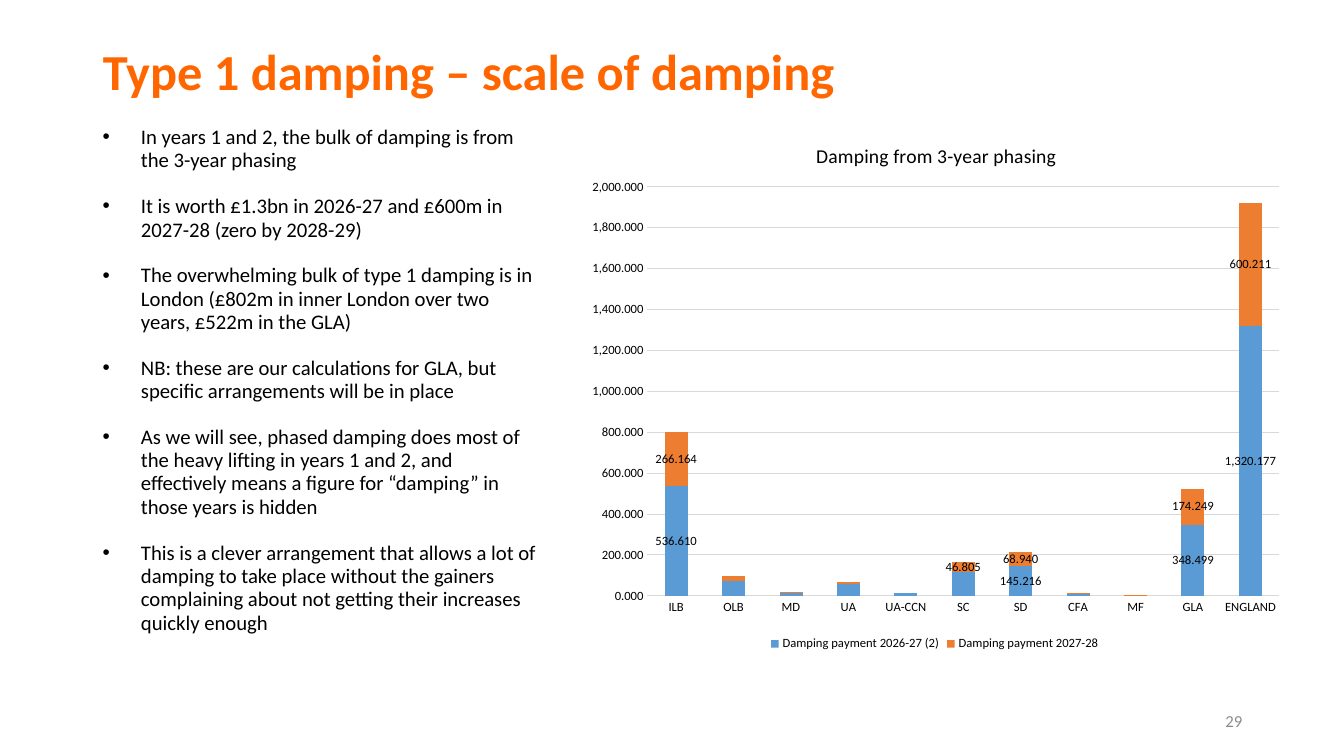
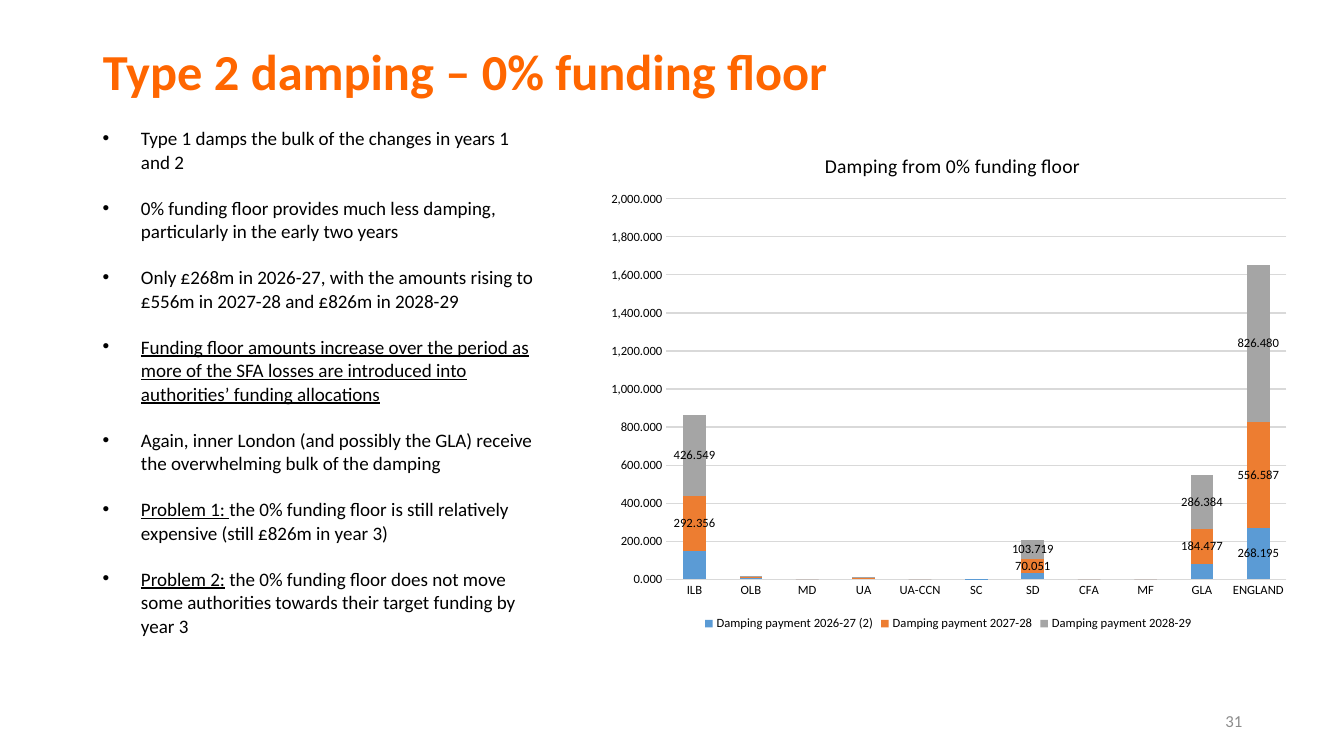
from dataclasses import dataclass

from lxml import etree
from pptx import Presentation
from pptx.chart.data import CategoryChartData
from pptx.dml.color import RGBColor
from pptx.enum.chart import XL_CHART_TYPE as ChartType
from pptx.enum.chart import XL_LABEL_POSITION as LabelPosition
from pptx.enum.chart import XL_LEGEND_POSITION as LegendPosition
from pptx.enum.chart import XL_TICK_MARK as TickMark
from pptx.enum.text import MSO_ANCHOR as Anchor
from pptx.enum.text import MSO_AUTO_SIZE as AutoSize
from pptx.enum.text import PP_ALIGN as Align
from pptx.oxml.ns import qn
from pptx.util import Inches, Pt

# Shared look
FONT = "Calibri"
ORANGE, BLACK, GREY, GRID = "FF6600", "000000", "8C8C8C", "D9D9D9"
SERIES_COLOURS = ["5B9BD5", "ED7D31", "A5A5A5"]
NUMBER_FORMAT = "#,##0.000"
AUTHORITIES = ["ILB", "OLB", "MD", "UA", "UA-CCN", "SC", "SD", "CFA", "MF",
               "GLA", "ENGLAND"]
LARGEST = ("ILB", "SD", "GLA", "ENGLAND")


@dataclass
class Span:
    text: str
    underline: bool = False


@dataclass
class Payments:
    year: str
    values: list[float]
    labelled: tuple[str, ...] = LARGEST


@dataclass
class DampingChart:
    title: str
    box: tuple[float, float, float, float]
    title_x: float
    plot_y: float
    plot_height: float
    payments: list[Payments]


@dataclass
class DampingSlide:
    title: str
    number: str
    text_size: float
    line_spacing: float
    bullets: list[list[Span]]
    chart: DampingChart


SLIDES = [
    DampingSlide(
        "Type 1 damping – scale of damping", "29", 14.8, 0.94,
        [
            [Span("In years 1 and 2, the bulk of damping is from the 3-year phasing")],
            [Span("It is worth £1.3bn in 2026-27 and £600m in 2027-28 "
                  "(zero by 2028-29)")],
            [Span("The overwhelming bulk of type 1 damping is in London "
                  "(£802m in inner London over two years, £522m in the GLA)")],
            [Span("NB: these are our calculations for GLA, but specific "
                  "arrangements will be in place")],
            [Span("As we will see, phased damping does most of the heavy lifting "
                  "in years 1 and 2, and effectively means a figure for “damping” "
                  "in those years is hidden")],
            [Span("This is a clever arrangement that allows a lot of damping to "
                  "take place without the gainers complaining about not getting "
                  "their increases quickly enough")],
        ],
        DampingChart(
            "Damping from 3-year phasing", (5.71, 1.16, 7.12, 5.34), 0.33, 0.13, 0.76,
            [
                Payments("2026-27 (2)", [536.61, 70.846, 15.511, 57.169, 13.852, 116.199,
                                         145.216, 11.857, 4.418, 348.499, 1320.177]),
                Payments("2027-28", [266.164, 26.413, 3.829, 10.45, 0, 46.805,
                                     68.94, 1.213, 2.15, 174.249, 600.211],
                         LARGEST + ("SC",)),
            ],
        ),
    ),
    DampingSlide(
        "Type 2 damping – 0% funding floor", "31", 13.6, 1.03,
        [
            [Span("Type 1 damps the bulk of the changes in years 1 and 2")],
            [Span("0% funding floor provides much less damping, particularly in "
                  "the early two years")],
            [Span("Only £268m in 2026-27, with the amounts rising to £556m in "
                  "2027-28 and £826m in 2028-29")],
            [Span("Funding floor amounts increase over the period as more of the "
                  "SFA losses are introduced into authorities’ funding allocations",
                  True)],
            [Span("Again, inner London (and possibly the GLA) receive the "
                  "overwhelming bulk of the damping")],
            [Span("Problem 1: ", True),
             Span("the 0% funding floor is still relatively expensive "
                  "(still £826m in year 3)")],
            [Span("Problem 2:", True),
             Span(" the 0% funding floor does not move some authorities towards "
                  "their target funding by year 3")],
        ],
        DampingChart(
            "Damping from 0% funding floor", (5.91, 1.27, 6.99, 5.03), 0.32, 0.14, 0.75,
            [
                Payments("2026-27 (2)", [146.44, 4.154, 0, 3.884, 0, 1.446,
                                         33.548, 0, 0, 78.722, 268.195], ("ENGLAND",)),
                Payments("2027-28", [292.356, 6.481, 0, 3.222, 0, 0,
                                     70.051, 0, 0, 184.477, 556.587]),
                Payments("2028-29", [426.549, 6.71, 0, 3.118, 0, 0,
                                     103.719, 0, 0, 286.384, 826.48]),
            ],
        ),
    ),
]


def colour(hex_code: str) -> RGBColor:
    return RGBColor.from_string(hex_code)


def style_font(font, size: float, hex_code: str = BLACK, bold: bool = False) -> None:
    font.name, font.size, font.bold = FONT, Pt(size), bold
    font.color.rgb = colour(hex_code)


def add_run(paragraph, text: str, size: float, hex_code: str = BLACK,
            bold: bool = False, underline: bool = False) -> None:
    run = paragraph.add_run()
    run.text = text
    style_font(run.font, size, hex_code, bold)
    if underline:
        run.font.underline = True


def add_text_frame(slide, left: float, top: float, width: float, height: float):
    frame = slide.shapes.add_textbox(
        Inches(left), Inches(top), Inches(width), Inches(height)).text_frame
    frame.word_wrap = True
    return frame


def add_title(slide, text: str) -> None:
    title = slide.shapes.title
    title.left, title.top = Inches(0.92), Inches(0.41)
    title.width, title.height = Inches(11.5), Inches(0.66)
    frame = title.text_frame
    frame.auto_size, frame.vertical_anchor = AutoSize.NONE, Anchor.MIDDLE
    paragraph = frame.paragraphs[0]
    paragraph.alignment, paragraph.line_spacing = Align.LEFT, 0.9
    add_run(paragraph, text, 36, ORANGE, bold=True)


def add_bullets(slide, content: DampingSlide) -> None:
    frame = add_text_frame(slide, 0.92, 1.2, 4.5, 5.55)
    for index, spans in enumerate(content.bullets):
        paragraph = frame.add_paragraph() if index else frame.paragraphs[0]
        properties = paragraph._p.get_or_add_pPr()
        properties.set("marL", str(Inches(0.38)))
        properties.set("indent", str(-Inches(0.38)))
        etree.SubElement(properties, qn("a:buFont")).set("typeface", "Arial")
        etree.SubElement(properties, qn("a:buChar")).set("char", "•")
        paragraph.line_spacing = content.line_spacing
        paragraph.space_before = Pt(10 if index else 0)
        paragraph.space_after = Pt(6)
        for span in spans:
            add_run(paragraph, span.text, content.text_size, underline=span.underline)


def add_page_number(slide, number: str) -> None:
    frame = add_text_frame(slide, 9.42, 6.95, 3, 0.4)
    frame.vertical_anchor = Anchor.MIDDLE
    frame.paragraphs[0].alignment = Align.RIGHT
    add_run(frame.paragraphs[0], number, 12, GREY)


def set_layout(parent, position: int, **settings: str | float) -> None:
    """Place a chart part by fractions of the chart's size."""
    for old in parent.findall(qn("c:layout")):
        parent.remove(old)
    layout = etree.Element(qn("c:layout"))
    manual = etree.SubElement(layout, qn("c:manualLayout"))
    for name, value in settings.items():
        etree.SubElement(manual, qn(f"c:{name}")).set("val", str(value))
    parent.insert(position, layout)


def style_axes(chart) -> None:
    for axis in (chart.category_axis, chart.value_axis):
        axis.major_tick_mark = axis.minor_tick_mark = TickMark.NONE
        style_font(axis.tick_labels.font, 9)
    category_line = chart.category_axis.format.line
    amounts = chart.value_axis
    amounts.minimum_scale, amounts.maximum_scale, amounts.major_unit = 0, 2000, 200
    amounts.tick_labels.number_format = NUMBER_FORMAT
    amounts.tick_labels.number_format_is_linked = False
    amounts.format.line.fill.background()
    amounts.has_major_gridlines = True
    for line in (category_line, amounts.major_gridlines.format.line):
        line.color.rgb, line.width = colour(GRID), Pt(0.75)


def add_damping_chart(slide, content: DampingChart) -> None:
    data = CategoryChartData(number_format=NUMBER_FORMAT)
    data.categories = AUTHORITIES
    for payments in content.payments:
        data.add_series(f"Damping payment {payments.year}", payments.values)
    chart = slide.shapes.add_chart(
        ChartType.COLUMN_STACKED, *map(Inches, content.box), data).chart
    style_font(chart.font, 10)
    style_axes(chart)

    # Columns, with values on the chosen authorities
    plot = chart.plots[0]
    plot.gap_width, plot.overlap, plot.vary_by_categories = 150, 100, False
    for series, payments, fill in zip(plot.series, content.payments, SERIES_COLOURS):
        series.format.fill.solid()
        series.format.fill.fore_color.rgb = colour(fill)
        series.data_labels.show_value = False
        for index, authority in enumerate(AUTHORITIES):
            if authority in payments.labelled:
                label = series.points[index].data_label
                style_font(label.font, 9)
                label.position = LabelPosition.CENTER

    # Legend and heading
    chart.has_legend = True
    chart.legend.position = LegendPosition.BOTTOM
    chart.legend.include_in_layout = False
    style_font(chart.legend.font, 9)
    chart.has_title = True
    heading = chart.chart_title
    add_run(heading.text_frame.paragraphs[0], content.title, 14)

    set_layout(heading._element, 1, xMode="edge", yMode="edge",
               x=content.title_x, y=0.04)
    set_layout(chart._chartSpace.find(f".//{qn('c:plotArea')}"), 0,
               layoutTarget="inner", xMode="edge", yMode="edge",
               x=0.1, y=content.plot_y, w=0.88, h=content.plot_height)


def main() -> None:
    deck = Presentation()
    deck.slide_width, deck.slide_height = Inches(13.33), Inches(7.5)
    title_only = deck.slide_layouts[5]
    for content in SLIDES:
        slide = deck.slides.add_slide(title_only)
        add_title(slide, content.title)
        add_bullets(slide, content)
        add_page_number(slide, content.number)
        add_damping_chart(slide, content.chart)
    deck.save("out.pptx")


if __name__ == "__main__":
    main()
